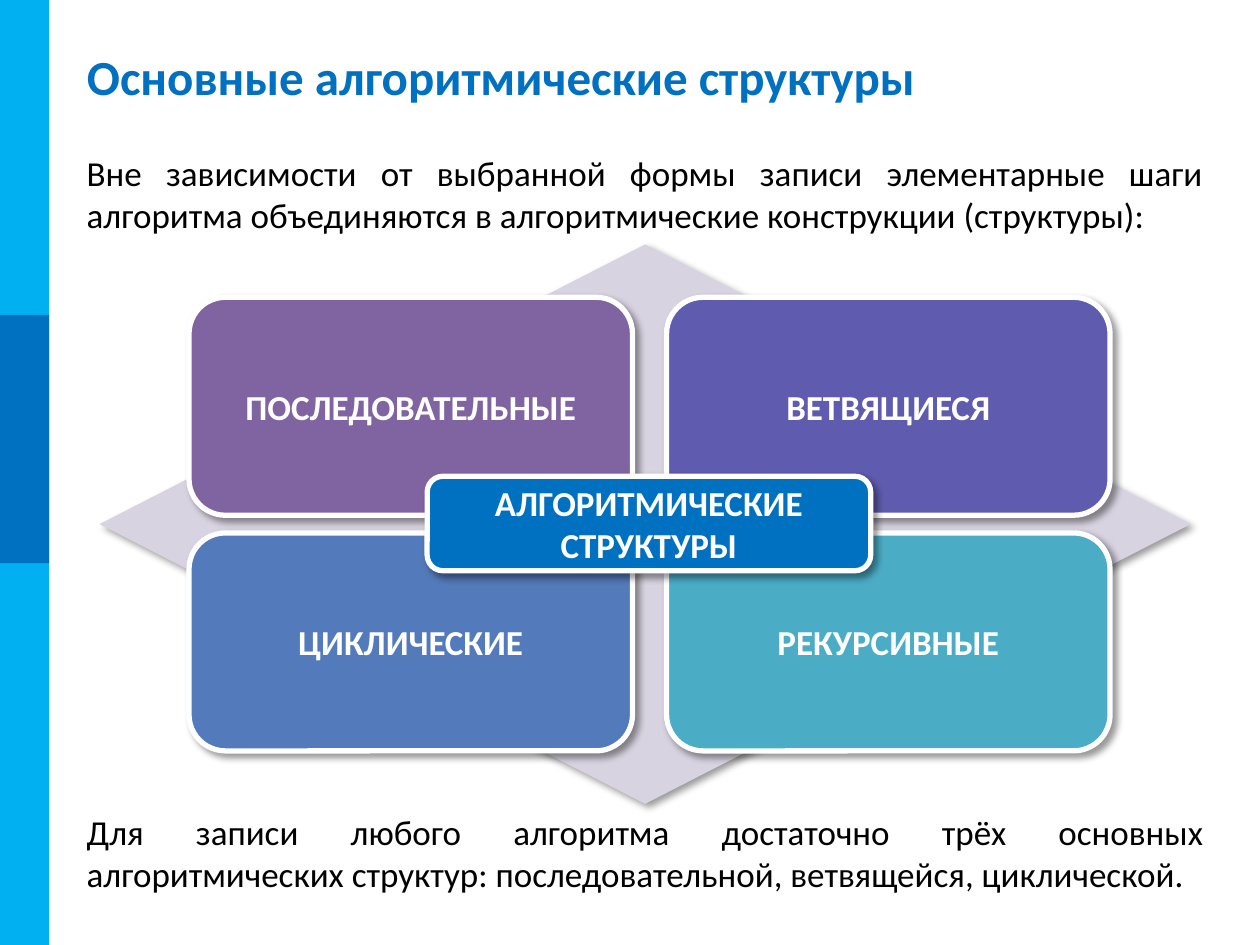
from lxml import etree
from pptx import Presentation
from pptx import util as u
from pptx.dml.color import RGBColor
from pptx.enum import shapes, text
from pptx.oxml import ns

FONT = "Calibri"
BLUE, SKY, WHITE, BLACK = "0070C0", "00B0F0", "FFFFFF", "000000"
LEFT, WIDTH = 0.59, 9.06
CARD_W, CARD_H = 3.52, 1.73


def color(code):
    return RGBColor.from_string(code)


def inches(*lengths):
    return [u.Inches(length) for length in lengths]


def add_shadow(shape):
    """Give the shape a soft shadow to the lower right."""
    effects = shape._element.spPr.find(ns.qn("a:effectLst"))
    shadow = etree.SubElement(
        effects, ns.qn("a:outerShdw"), blurRad=str(u.Pt(4)), dist=str(u.Pt(3)),
        dir=str(45 * 60000), algn="ctr", rotWithShape="0")
    tint = etree.SubElement(shadow, ns.qn("a:srgbClr"), val=BLACK)
    etree.SubElement(tint, ns.qn("a:alpha"), val="40000")


class Deck:
    def __init__(self):
        self.presentation = Presentation()
        self.presentation.slide_width, self.presentation.slide_height = inches(10, 7.5)
        self.slide = self.presentation.slides.add_slide(self.presentation.slide_layouts[5])

    def set_words(self, frame, words, size, ink, align, bold=False):
        frame.text = words
        frame.word_wrap = True
        frame.auto_size = text.MSO_AUTO_SIZE.NONE
        for paragraph in frame.paragraphs:
            paragraph.alignment = align
            for run in paragraph.runs:
                run.font.name = FONT
                run.font.size = u.Pt(size)
                run.font.bold = bold
                run.font.color.rgb = color(ink)

    def title(self, words, top, height):
        heading = self.slide.shapes.title
        heading.left, heading.top, heading.width, heading.height = inches(LEFT, top, WIDTH, height)
        self.set_words(heading.text_frame, words, 28, BLUE, text.PP_ALIGN.LEFT, bold=True)
        heading.text_frame.vertical_anchor = text.MSO_ANCHOR.MIDDLE

    def body(self, words, top, height):
        box = self.slide.shapes.add_textbox(*inches(LEFT, top, WIDTH, height))
        self.set_words(box.text_frame, words, 20, BLACK, text.PP_ALIGN.JUSTIFY)
        box.text_frame.paragraphs[0].space_before = u.Pt(4)

    def block(self, kind, left, top, width, height, fill):
        shape = self.slide.shapes.add_shape(kind, *inches(left, top, width, height))
        shape.shadow.inherit = False
        shape.fill.solid()
        shape.fill.fore_color.rgb = color(fill)
        shape.line.fill.background()
        return shape

    def card(self, words, left, top, height, fill):
        card = self.block(shapes.MSO_SHAPE.ROUNDED_RECTANGLE, left, top, CARD_W, height, fill)
        card.line.color.rgb = color(WHITE)
        card.line.width = u.Pt(3)
        add_shadow(card)
        self.set_words(card.text_frame, words, 20, WHITE, text.PP_ALIGN.CENTER, bold=True)
        card.text_frame.vertical_anchor = text.MSO_ANCHOR.MIDDLE


def main():
    deck = Deck()
    rectangle = shapes.MSO_SHAPE.RECTANGLE
    deck.block(rectangle, 0, 0, 0.39, 7.5, SKY)
    deck.block(rectangle, 0, 2.5, 0.39, 1.97, BLUE)
    deck.title("Основные алгоритмические структуры", 0.3, 0.61)
    deck.body("Вне зависимости от выбранной формы записи элементарные шаги алгоритма "
              "объединяются в алгоритмические конструкции (структуры):", 1.15, 0.87)

    add_shadow(deck.block(shapes.MSO_SHAPE.DIAMOND, 0.79, 1.94, 8.66, 4.44, "D8D3E0"))
    structures = [("ПОСЛЕДОВАТЕЛЬНЫЕ", "8064A2"), ("ВЕТВЯЩИЕСЯ", "5F5BAE"),
                  ("ЦИКЛИЧЕСКИЕ", "537ABA"), ("РЕКУРСИВНЫЕ", "4BACC6")]
    for index, (name, fill) in enumerate(structures):
        row, column = divmod(index, 2)
        deck.card(name, 1.5 + column * 3.79, 2.36 + row * 1.87, CARD_H, fill)

    deck.body("Для записи любого алгоритма достаточно трёх основных алгоритмических "
              "структур: последовательной, ветвящейся, циклической.", 6.38, 0.83)
    deck.card("АЛГОРИТМИЧЕСКИЕ\vСТРУКТУРЫ", 3.39, 3.78, 0.75, BLUE)
    deck.presentation.save("out.pptx")


if __name__ == "__main__":
    main()
